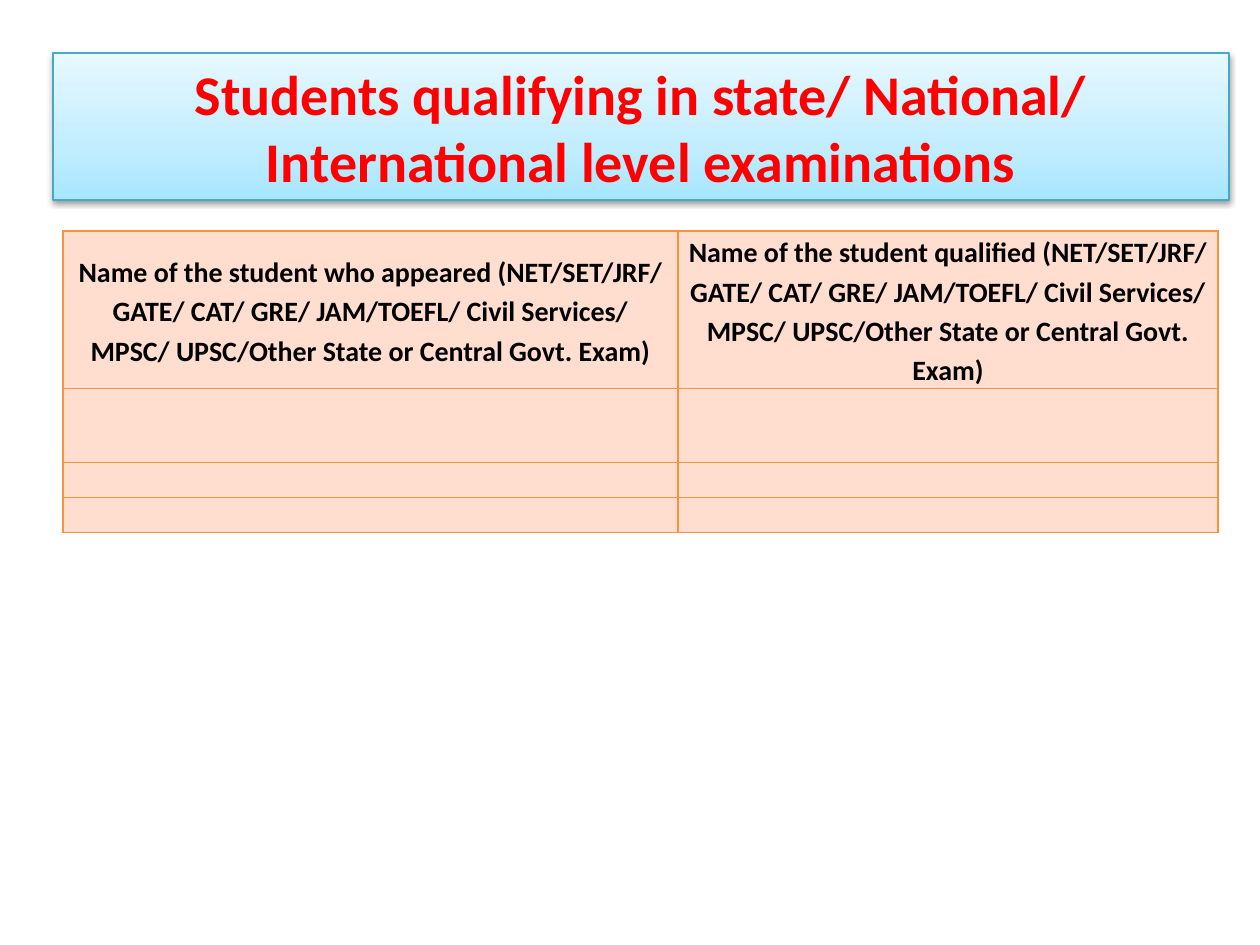
from lxml import etree
from pptx import Presentation
from pptx import util as u
from pptx.dml.color import RGBColor
from pptx.enum import text
from pptx.oxml import ns, parse_xml

EMU_PER_PX = 914400 / 126
EXAMS = "(NET/SET/JRF/ GATE/ CAT/ GRE/ JAM/TOEFL/ Civil Services/ MPSC/ UPSC/Other State or Central Govt. Exam)"
HEADERS = ["Name of the student who appeared " + EXAMS, "Name of the student qualified " + EXAMS]
COLUMN_WIDTHS = [615, 540]
ROW_HEIGHTS = [157, 74, 35, 35]


def px(length):
    return u.Emu(round(length * EMU_PER_PX))


def color(value):
    return RGBColor.from_string(value)


def drawing(markup):
    """Build a DrawingML element from markup using the a: prefix."""
    head, mark, rest = markup.partition(">")
    return parse_xml(f"{head} {ns.nsdecls('a')}{mark}{rest}")


class SlideBuilder:
    font = "Calibri"
    title_color = "FF0000"
    text_color = "000000"
    banner_stops = [(0, "A7E6FF"), (35, "C1EDFF"), (100, "E7F8FF")]
    banner_line = "46AAC5"
    cell_fill = "FFDDCF"
    border = "F69240"

    def __init__(self, deck):
        self.page = deck.slides.add_slide(deck.slide_layouts[5])

    def words(self, frame, wording, size, ink, spacing):
        frame.text = wording
        frame.word_wrap = True
        para = frame.paragraphs[0]
        para.alignment = text.PP_ALIGN.CENTER
        para.line_spacing = spacing
        for span in para.runs:
            span.font.name = self.font
            span.font.size = u.Pt(size)
            span.font.bold = True
            span.font.color.rgb = color(ink)

    def title(self, wording, left, top, width, height):
        banner = self.page.shapes.title
        banner.left, banner.top = px(left), px(top)
        banner.width, banner.height = px(width), px(height)
        # Rounded outline, gradient and shadow
        properties = banner.element.spPr
        properties.append(drawing('<a:prstGeom prst="roundRect"><a:avLst/></a:prstGeom>'))
        stops = "".join(
            f'<a:gs pos="{place * 1000}"><a:srgbClr val="{shade}"/></a:gs>'
            for place, shade in self.banner_stops)
        properties.append(drawing(
            f'<a:gradFill><a:gsLst>{stops}</a:gsLst><a:lin ang="16200000" scaled="0"/></a:gradFill>'))
        banner.line.color.rgb = color(self.banner_line)
        banner.line.width = u.Pt(0.75)
        properties.append(drawing(
            '<a:effectLst><a:outerShdw blurRad="40000" dist="20000" dir="5400000" rotWithShape="0">'
            '<a:srgbClr val="000000"><a:alpha val="38000"/></a:srgbClr></a:outerShdw></a:effectLst>'))
        self.words(banner.text_frame, wording, 32, self.title_color, 1.0)
        banner.text_frame.auto_size = text.MSO_AUTO_SIZE.NONE
        banner.text_frame.vertical_anchor = text.MSO_ANCHOR.MIDDLE

    def table(self, headers, left, top, widths, heights):
        grid = self.page.shapes.add_table(
            len(heights), len(widths), px(left), px(top), px(sum(widths)), px(sum(heights))).table
        for column, width in zip(grid.columns, widths):
            column.width = px(width)
        for row, height in zip(grid.rows, heights):
            row.height = px(height)
        for cell in grid.iter_cells():
            self.cell(cell)
        for cell, wording in zip(grid.rows[0].cells, headers):
            self.words(cell.text_frame, wording, 16, self.text_color, 1.15)

    def cell(self, cell):
        cell.margin_left = cell.margin_right = u.Inches(0.07)
        cell.margin_top = cell.margin_bottom = 0
        cell.vertical_anchor = text.MSO_ANCHOR.MIDDLE
        # Small end mark, so that empty rows keep their height
        mark = etree.SubElement(cell.text_frame.paragraphs[0]._p, ns.qn("a:endParaRPr"))
        mark.set("sz", "1200")
        # Borders come before the fill
        properties = cell._tc.get_or_add_tcPr()
        for side in ("lnL", "lnR", "lnT", "lnB"):
            properties.append(drawing(
                f'<a:{side} w="{u.Pt(0.75)}"><a:solidFill><a:srgbClr val="{self.border}"/>'
                f'</a:solidFill></a:{side}>'))
        cell.fill.solid()
        cell.fill.fore_color.rgb = color(self.cell_fill)


def main():
    deck = Presentation()
    deck.slide_width, deck.slide_height = px(1260), px(945)
    slide = SlideBuilder(deck)
    # Banner
    slide.title("Students qualifying in state/ National/ International level examinations",
                53, 53, 1176, 147)
    # Examination table
    slide.table(HEADERS, 63, 231, COLUMN_WIDTHS, ROW_HEIGHTS)
    deck.save("out.pptx")


if __name__ == "__main__":
    main()
